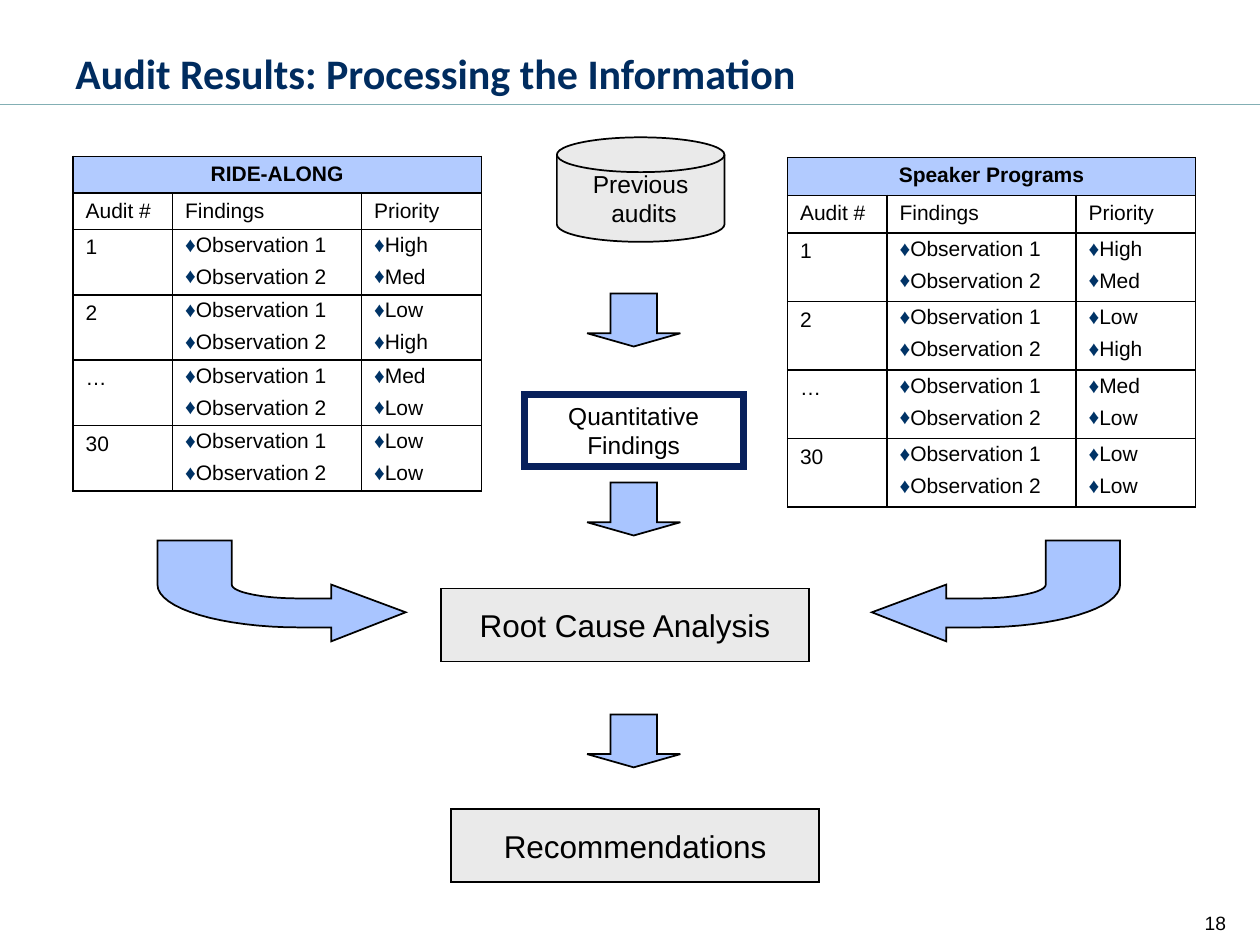
"""Build the audit results slide: two findings tables feeding a root cause flow."""
from dataclasses import dataclass

from lxml import etree
from pptx import Presentation
from pptx.dml.color import RGBColor
from pptx.enum.shapes import MSO_CONNECTOR, MSO_SHAPE
from pptx.enum.text import MSO_ANCHOR, PP_ALIGN
from pptx.oxml.ns import qn
from pptx.util import Inches, Pt

LEFT, CENTER, RIGHT = PP_ALIGN.LEFT, PP_ALIGN.CENTER, PP_ALIGN.RIGHT
TOP, MIDDLE = MSO_ANCHOR.TOP, MSO_ANCHOR.MIDDLE
RECTANGLE, DOWN_ARROW, DISK = (
    MSO_SHAPE.RECTANGLE, MSO_SHAPE.DOWN_ARROW, MSO_SHAPE.FLOWCHART_MAGNETIC_DISK)
STRAIGHT = MSO_CONNECTOR.STRAIGHT


@dataclass(frozen=True)
class Theme:
    heading_font: str = "Calibri"
    body_font: str = "Arial"
    title: str = "002C5F"
    ink: str = "000000"
    rule: str = "83AFB4"
    gray: str = "EAEAEA"
    blue: str = "6699FF"
    navy: str = "08215C"
    bullet: str = "003366"
    title_size: int = 24
    stage_size: int = 18
    box_size: int = 14
    table_size: int = 12
    number_size: int = 11
    arrow_opacity: int = 56
    header_opacity: int = 50


@dataclass(frozen=True)
class Box:
    text: str
    left: float
    top: float
    width: float
    height: float
    size: int
    kind: int = RECTANGLE
    fill: str | None = None
    line: str = "000000"
    line_width: float = 1
    anchor: int = MIDDLE
    wrap: bool = False


@dataclass(frozen=True)
class FindingsTable:
    title: str
    left: float
    top: float
    header_height: float
    row_height: float
    bottom_margin: float


THEME = Theme()
COLUMN_WIDTHS = (0.79, 1.5, 0.95)
HEADERS = ("Audit #", "Findings", "Priority")
OBSERVATIONS = "Observation 1\nObservation 2"
AUDITS = (("1", "High\nMed"), ("2", "Low\nHigh"), ("…", "Med\nLow"), ("30", "Low\nLow"))
TABLES = (
    FindingsTable("RIDE-ALONG", 0.58, 1.24, 0.29, 0.52, 0.02),
    FindingsTable("Speaker Programs", 6.25, 1.25, 0.3, 0.54, 0.05),
)
BOXES = (
    Box("Previous\n audits", 4.42, 1.09, 1.33, 0.83, THEME.box_size, DISK, THEME.gray),
    Box("Quantitative Findings", 4.16, 3.13, 1.74, 0.57, THEME.box_size,
        line=THEME.navy, line_width=4, anchor=TOP, wrap=True),
    Box("Root Cause Analysis", 3.5, 4.67, 2.92, 0.58, THEME.stage_size, fill=THEME.gray),
    Box("Recommendations", 3.58, 6.42, 2.92, 0.58, THEME.stage_size, fill=THEME.gray),
)
ARROW_TOPS = (2.33, 3.83, 5.67)
MIRROR_SUM = 10.14


def write_text(frame, text: str, *, size: int, color: str = THEME.ink,
               font: str = THEME.body_font, bold: bool = False, align=LEFT,
               bullet: str | None = None) -> None:
    for index, line in enumerate(text.split("\n")):
        paragraph = frame.paragraphs[0] if index == 0 else frame.add_paragraph()
        paragraph.alignment = align
        if bullet:
            paragraph.line_spacing = 0.9
            if index:
                paragraph.space_before = Pt(size / 2)
            properties = paragraph._p.get_or_add_pPr()
            properties.set("marL", "0")
            properties.set("indent", "0")
            bullet_color = etree.SubElement(properties, qn("a:buClr"))
            etree.SubElement(bullet_color, qn("a:srgbClr"), val=THEME.bullet)
            etree.SubElement(properties, qn("a:buFont"), typeface=font)
            etree.SubElement(properties, qn("a:buChar"), char=bullet)
        run = paragraph.add_run()
        run.text = line
        run.font.name, run.font.size, run.font.bold = font, Pt(size), bold
        run.font.color.rgb = RGBColor.from_string(color)


def paint(fill, parent, color: str | None, opacity: int = 100) -> None:
    if color is None:
        fill.background()
        return
    fill.solid()
    fill.fore_color.rgb = RGBColor.from_string(color)
    if opacity < 100:
        color_element = parent.find(qn("a:solidFill"))[0]
        etree.SubElement(color_element, qn("a:alpha"), val=str(opacity * 1000))


def style_shape(shape, fill: str | None, opacity: int = 100,
                line: str = THEME.ink, line_width: float = 1) -> None:
    shape.shadow.inherit = False
    properties = shape._element.spPr
    paint(shape.fill, properties, fill, opacity)
    shape.line.color.rgb = RGBColor.from_string(line)
    shape.line.width = Pt(line_width)
    etree.SubElement(properties.find(qn("a:ln")), qn("a:miter"), lim="800000")


def add_text_box(slide, text: str, left: float, top: float, width: float, height: float,
                 anchor=TOP, **text_format) -> None:
    frame = slide.shapes.add_textbox(
        Inches(left), Inches(top), Inches(width), Inches(height)).text_frame
    frame.word_wrap = True
    frame.vertical_anchor = anchor
    write_text(frame, text, **text_format)


def add_box(slide, box: Box) -> None:
    shape = slide.shapes.add_shape(
        box.kind, Inches(box.left), Inches(box.top), Inches(box.width), Inches(box.height))
    style_shape(shape, box.fill, line=box.line, line_width=box.line_width)
    shape.text_frame.word_wrap = box.wrap
    shape.text_frame.vertical_anchor = box.anchor
    write_text(shape.text_frame, box.text, size=box.size, align=CENTER)


def style_cell(cell, bottom_margin: float, fill: str | None = None) -> None:
    cell.margin_bottom = Inches(bottom_margin)
    properties = cell._tc.get_or_add_tcPr()
    for side in ("a:lnL", "a:lnR", "a:lnT", "a:lnB"):
        border = etree.SubElement(properties, qn(side), w=str(Pt(1)))
        border_fill = etree.SubElement(border, qn("a:solidFill"))
        etree.SubElement(border_fill, qn("a:srgbClr"), val=THEME.ink)
    paint(cell.fill, properties, fill, THEME.header_opacity)


def add_findings_table(slide, findings: FindingsTable) -> None:
    heights = [findings.header_height] * 2 + [findings.row_height] * len(AUDITS)
    table = slide.shapes.add_table(
        len(heights), len(COLUMN_WIDTHS), Inches(findings.left), Inches(findings.top),
        Inches(sum(COLUMN_WIDTHS)), Inches(sum(heights))).table
    table.first_row = table.horz_banding = False
    for column, width in zip(table.columns, COLUMN_WIDTHS):
        column.width = Inches(width)
    for row, height in zip(table.rows, heights):
        row.height = Inches(height)
    for cell in table.rows[0].cells:
        style_cell(cell, findings.bottom_margin, THEME.blue)
    table.cell(0, 0).merge(table.cell(0, 2))
    write_text(table.cell(0, 0).text_frame, findings.title,
               size=THEME.table_size, bold=True, align=CENTER)
    rows = [HEADERS] + [(number, OBSERVATIONS, priority) for number, priority in AUDITS]
    for row_index, values in enumerate(rows, start=1):
        for column_index, value in enumerate(values):
            cell = table.cell(row_index, column_index)
            style_cell(cell, findings.bottom_margin)
            write_text(cell.text_frame, value, size=THEME.table_size,
                       bullet="♦" if "\n" in value else None)


def curve(start, control_1, control_2, end, steps: int = 16) -> list[tuple[float, float]]:
    return [
        tuple((1 - t) ** 3 * a + 3 * (1 - t) ** 2 * t * b + 3 * (1 - t) * t ** 2 * c + t ** 3 * d
              for a, b, c, d in zip(start, control_1, control_2, end))
        for t in (step / steps for step in range(steps + 1))]


def add_bent_arrow(slide, mirrored: bool) -> None:
    outline = [
        (3.22, 4.86), (2.63, 5.09), (2.63, 4.98),
        *curve((2.38, 4.98), (1.76, 4.98), (1.25, 4.83), (1.25, 4.64)), (1.25, 4.29), (1.84, 4.29),
        *curve((1.84, 4.64), (1.84, 4.7), (2.08, 4.75), (2.38, 4.75)), (2.63, 4.75), (2.63, 4.64)]
    points = [(Inches(MIRROR_SUM - x if mirrored else x), Inches(y)) for x, y in outline]
    builder = slide.shapes.build_freeform(*points[0])
    builder.add_line_segments(points[1:], close=True)
    style_shape(builder.convert_to_shape(), THEME.blue, THEME.arrow_opacity)


def add_down_arrow(slide, top: float) -> None:
    shape = slide.shapes.add_shape(
        DOWN_ARROW, Inches(4.66), Inches(top), Inches(0.74), Inches(0.42))
    shape.adjustments[0], shape.adjustments[1] = 0.5, 0.25
    style_shape(shape, THEME.blue, THEME.arrow_opacity)


def main() -> None:
    presentation = Presentation()
    presentation.slide_width, presentation.slide_height = Inches(10), Inches(7.5)
    slide = presentation.slides.add_slide(presentation.slide_layouts[6])
    rule = slide.shapes.add_connector(STRAIGHT, 0, Inches(0.83), Inches(10), Inches(0.83))
    rule.line.color.rgb = RGBColor.from_string(THEME.rule)
    rule.line.width = Pt(1)
    etree.SubElement(rule._element.spPr, qn("a:effectLst"))
    add_text_box(slide, "Audit Results: Processing the Information", 0.5, 0.31, 9, 0.53, MIDDLE,
                 size=THEME.title_size, color=THEME.title, font=THEME.heading_font, bold=True)
    add_text_box(slide, "18", 7.5, 7.18, 2.33, 0.4, size=THEME.number_size, align=RIGHT)
    for findings in TABLES:
        add_findings_table(slide, findings)
    for box in BOXES:
        add_box(slide, box)
    for top in ARROW_TOPS:
        add_down_arrow(slide, top)
    for mirrored in (False, True):
        add_bent_arrow(slide, mirrored)
    presentation.save("out.pptx")


if __name__ == "__main__":
    main()
